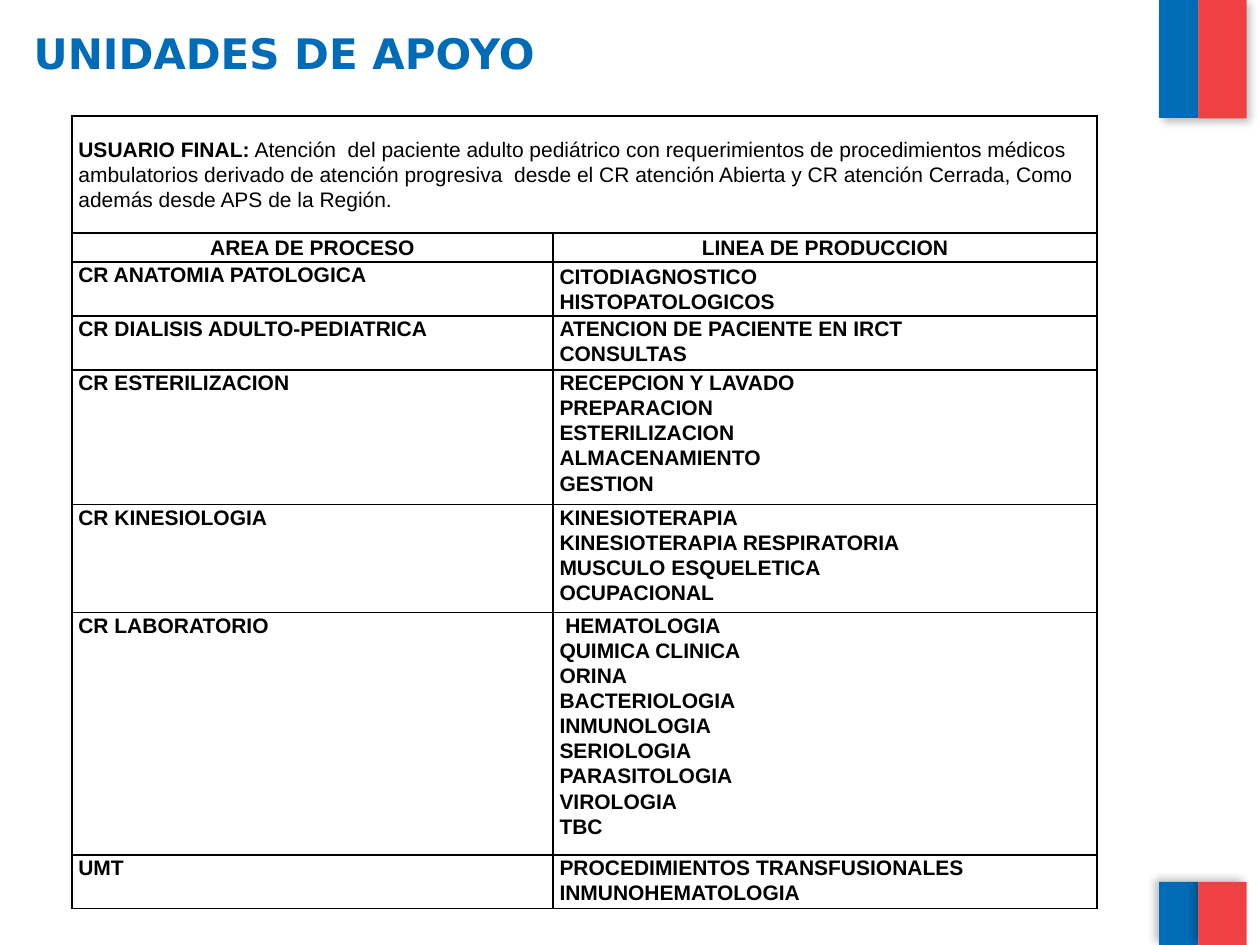
from dataclasses import dataclass

from lxml import etree
from pptx import Presentation
from pptx.dml.color import RGBColor
from pptx.enum.shapes import MSO_SHAPE
from pptx.enum.text import MSO_ANCHOR, PP_ALIGN
from pptx.oxml import parse_xml
from pptx.oxml.ns import qn
from pptx.util import Cm, Pt

RECT = MSO_SHAPE.RECTANGLE
TOP, MIDDLE = MSO_ANCHOR.TOP, MSO_ANCHOR.MIDDLE
LEFT, CENTER = PP_ALIGN.LEFT, PP_ALIGN.CENTER
COLORS = {"blue": "006CB7", "red": "EF4144", "black": "000000"}
NS = 'xmlns:a="http://schemas.openxmlformats.org/drawingml/2006/main"'


@dataclass
class Band:
    color: str
    left: float
    top: float
    width: float
    height: float
    shadow_angle: int


@dataclass
class Area:
    name: str
    lines: list[str]
    height: float
    anchor: MSO_ANCHOR = TOP


BANDS = [
    Band("blue", 23.37, -0.03, 0.79, 2.41, 45),
    Band("red", 24.16, 0, 0.97, 2.39, 45),
    Band("blue", 23.37, 17.78, 0.79, 1.27, 215),
    Band("red", 24.16, 17.78, 0.97, 1.27, 215),
]
USER_LABEL = "USUARIO FINAL:"
USER_TEXT = (
    " Atención  del paciente adulto pediátrico con requerimientos de procedimientos "
    "médicos ambulatorios derivado de atención progresiva  desde el CR atención Abierta "
    "y CR atención Cerrada, Como además desde APS de la Región."
)
HEADERS = ["AREA DE PROCESO", "LINEA DE PRODUCCION"]
AREAS = [
    Area("CR ANATOMIA PATOLOGICA", ["CITODIAGNOSTICO", "HISTOPATOLOGICOS"], 1.07, MIDDLE),
    Area("CR DIALISIS ADULTO-PEDIATRICA", ["ATENCION DE PACIENTE EN IRCT", "CONSULTAS"], 1.07),
    Area("CR ESTERILIZACION", ["RECEPCION Y LAVADO", "PREPARACION", "ESTERILIZACION",
                               "ALMACENAMIENTO", "GESTION"], 2.67),
    Area("CR KINESIOLOGIA", ["KINESIOTERAPIA", "KINESIOTERAPIA RESPIRATORIA",
                             "MUSCULO ESQUELETICA", "OCUPACIONAL"], 1.88),
    Area("CR LABORATORIO", [" HEMATOLOGIA", "QUIMICA CLINICA", "ORINA", "BACTERIOLOGIA",
                            "INMUNOLOGIA", "SERIOLOGIA", "PARASITOLOGIA", "VIROLOGIA",
                            "TBC"], 4.78),
    Area("UMT", ["PROCEDIMIENTOS TRANSFUSIONALES", "INMUNOHEMATOLOGIA"], 1.07),
]
COL_WIDTHS = [9.7, 10.97]
ROW_HEIGHTS = [2.36, 0.58] + [area.height for area in AREAS]


def add_run(p, text: str, size: int = 12, font: str = "Arial",
            color: str = "black", bold: bool = True) -> None:
    """Append a formatted run to a paragraph."""
    r = p.add_run()
    r.text = text
    r.font.size = Pt(size)
    r.font.name = font
    r.font.bold = bold
    r.font.color.rgb = RGBColor.from_string(COLORS[color])


def add_band(s, band: Band) -> None:
    """Draw a flag band with a soft shadow."""
    sp = s.shapes.add_shape(RECT, Cm(band.left), Cm(band.top), Cm(band.width), Cm(band.height))
    sp.fill.solid()
    sp.fill.fore_color.rgb = RGBColor.from_string(COLORS[band.color])
    sp.line.fill.background()
    sp.shadow.inherit = False
    effects = sp.element.spPr.find(qn("a:effectLst"))
    effects.append(parse_xml(
        f'<a:outerShdw {NS} blurRad="{Pt(5)}" dist="{Pt(3)}" dir="{band.shadow_angle * 60000}" '
        f'rotWithShape="0"><a:srgbClr val="{COLORS["black"]}"><a:alpha val="25000"/>'
        '</a:srgbClr></a:outerShdw>'))


def add_title(s, text: str) -> None:
    """Write the slide title."""
    sp = s.shapes.add_textbox(Cm(0.43), Cm(0.43), Cm(22.68), Cm(1.5))
    tf = sp.text_frame
    tf.word_wrap = True
    add_run(tf.paragraphs[0], text, 24, "DejaVu Sans", "blue")


def style_cell(cell, anchor: MSO_ANCHOR) -> None:
    """Set the margins, anchor, empty fill and borders of a cell."""
    cell.margin_left = cell.margin_right = Cm(0.13)
    cell.margin_top = cell.margin_bottom = 0
    cell.vertical_anchor = anchor
    cell.fill.background()
    tc_pr = cell._tc.get_or_add_tcPr()
    for i, side in enumerate(("lnL", "lnR", "lnT", "lnB")):
        ln = etree.Element(qn(f"a:{side}"), w=str(Pt(1)))
        fill = etree.SubElement(ln, qn("a:solidFill"))
        etree.SubElement(fill, qn("a:srgbClr"), val=COLORS["black"])
        tc_pr.insert(i, ln)


def fill_cell(cell, lines: list[str], align: PP_ALIGN = LEFT) -> None:
    """Write one bold paragraph per line."""
    tf = cell.text_frame
    for i, line in enumerate(lines):
        p = tf.add_paragraph() if i else tf.paragraphs[0]
        p.alignment = align
        p.line_spacing = 1.07
        add_run(p, line)


def add_units_table(s) -> None:
    """Build the table of process areas and production lines."""
    frame = s.shapes.add_table(len(ROW_HEIGHTS), len(COL_WIDTHS), Cm(1.45), Cm(2.34),
                               Cm(sum(COL_WIDTHS)), Cm(sum(ROW_HEIGHTS)))
    table = frame.table
    table.first_row = table.horz_banding = False
    for column, width in zip(table.columns, COL_WIDTHS):
        column.width = Cm(width)
    anchors = [(MIDDLE, MIDDLE)] * 2 + [(TOP, area.anchor) for area in AREAS]
    for i, (height, pair) in enumerate(zip(ROW_HEIGHTS, anchors)):
        table.rows[i].height = Cm(height)
        for j, anchor in enumerate(pair):
            style_cell(table.cell(i, j), anchor)
    user = table.cell(0, 0)
    user.merge(table.cell(0, 1))
    fill_cell(user, [USER_LABEL])
    add_run(user.text_frame.paragraphs[0], USER_TEXT, bold=False)
    for j, header in enumerate(HEADERS):
        fill_cell(table.cell(1, j), [header], CENTER)
    for i, area in enumerate(AREAS, 2):
        fill_cell(table.cell(i, 0), [area.name])
        fill_cell(table.cell(i, 1), area.lines)


def main() -> None:
    """Build and save the slide."""
    prs = Presentation()
    prs.slide_width, prs.slide_height = Cm(25.4), Cm(19.05)
    s = prs.slides.add_slide(prs.slide_layouts[6])
    for band in BANDS:
        add_band(s, band)
    add_title(s, "UNIDADES DE APOYO")
    add_units_table(s)
    prs.save("out.pptx")


if __name__ == "__main__":
    main()
